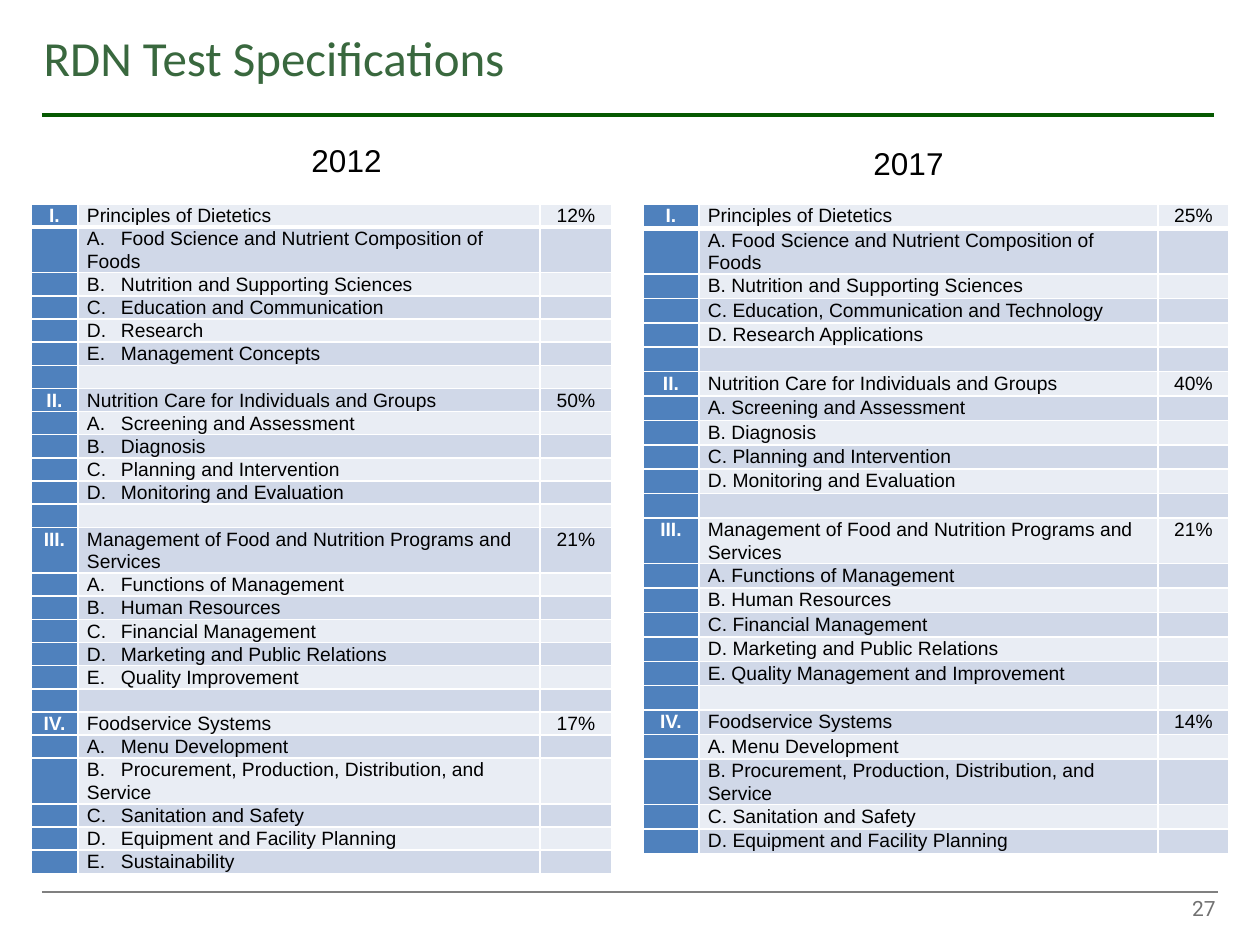
from lxml import etree
from pptx import Presentation
from pptx.dml.color import RGBColor
from pptx.enum.shapes import MSO_CONNECTOR
from pptx.enum.text import MSO_ANCHOR, PP_ALIGN
from pptx.oxml.ns import qn
from pptx.util import Emu, Pt

LEFT, CENTER, RIGHT = PP_ALIGN.LEFT, PP_ALIGN.CENTER, PP_ALIGN.RIGHT
TOP, MIDDLE = MSO_ANCHOR.TOP, MSO_ANCHOR.MIDDLE
STRAIGHT = MSO_CONNECTOR.STRAIGHT

WHITE = RGBColor(0xFF, 0xFF, 0xFF)
BLACK = RGBColor(0x00, 0x00, 0x00)
GRAY = RGBColor(0x80, 0x80, 0x80)
NUMBER_GRAY = RGBColor(0x71, 0x71, 0x71)
RULE_GREEN = RGBColor(0x06, 0x59, 0x01)
TITLE_GREEN = RGBColor(0x39, 0x68, 0x3E)
NUMERAL_BLUE = RGBColor(0x4F, 0x81, 0xBD)
BANDS = (RGBColor(0xE9, 0xED, 0xF4), RGBColor(0xD0, 0xD8, 0xE8))

PX = 914400 / 126
TOPIC_TAB = 34      # where the topic follows its letter
WRAPPED_ROW = 45    # height of a row with two lines
LINE_CHARS = 44     # longer topics take two lines

# Sections: heading, share of the test, topics
SPEC_2012 = [
    ("Principles of Dietetics", "12%",
     ["Food Science and Nutrient Composition of Foods",
      "Nutrition and Supporting Sciences", "Education and Communication",
      "Research", "Management Concepts"]),
    ("Nutrition Care for Individuals and Groups", "50%",
     ["Screening and Assessment", "Diagnosis", "Planning and Intervention",
      "Monitoring and Evaluation"]),
    ("Management of Food and Nutrition Programs and Services", "21%",
     ["Functions of Management", "Human Resources", "Financial Management",
      "Marketing and Public Relations", "Quality Improvement"]),
    ("Foodservice Systems", "17%",
     ["Menu Development",
      "Procurement, Production, Distribution, and Service",
      "Sanitation and Safety", "Equipment and Facility Planning",
      "Sustainability"]),
]
SPEC_2017 = [
    ("Principles of Dietetics", "25%",
     ["Food Science and Nutrient Composition of Foods",
      "Nutrition and Supporting Sciences",
      "Education, Communication and Technology", "Research Applications"]),
    ("Nutrition Care for Individuals and Groups", "40%",
     ["Screening and Assessment", "Diagnosis", "Planning and Intervention",
      "Monitoring and Evaluation"]),
    ("Management of Food and Nutrition Programs and Services", "21%",
     ["Functions of Management", "Human Resources", "Financial Management",
      "Marketing and Public Relations",
      "Quality Management and Improvement"]),
    ("Foodservice Systems", "14%",
     ["Menu Development",
      "Procurement, Production, Distribution, and Service",
      "Sanitation and Safety", "Equipment and Facility Planning"]),
]


def px(length):
    return Emu(round(length * PX))


def spec_rows(sections, gap):
    """Flatten sections into table rows, with an empty row between them."""
    rows = []
    for numeral, (heading, share, topics) in zip(("I.", "II.", "III.", "IV."), sections):
        if rows:
            rows.append(("", "", ""))
        rows.append((numeral, heading, share))
        rows += [("", f"{letter}.{gap}{topic}", "")
                 for letter, topic in zip("ABCDE", topics)]
    return rows


class SlideBuilder:
    font = "Arial"
    cell_size = 11
    cell_line = Pt(13)

    def __init__(self, slide):
        self.slide = slide

    def style(self, paragraph, size, color, font=None, align=LEFT, bold=False):
        paragraph.alignment = align
        paragraph.font.name = font or self.font
        paragraph.font.size = Pt(size)
        paragraph.font.bold = bold
        paragraph.font.color.rgb = color

    def title(self, text, left, top, width, height):
        title = self.slide.shapes.title
        title.left, title.top = px(left), px(top)
        title.width, title.height = px(width), px(height)
        title.text_frame.text = text
        title.text_frame.vertical_anchor = TOP
        self.style(title.text_frame.paragraphs[0], 28, TITLE_GREEN, "Calibri")

    def rule(self, left, right, y, color, weight):
        rule = self.slide.shapes.add_connector(STRAIGHT, px(left), px(y), px(right), px(y))
        rule.line.color.rgb = color
        rule.line.width = Pt(weight)
        etree.SubElement(rule._element.spPr, qn("a:effectLst"))

    def text(self, text, left, top, width, height, size, color,
             font=None, align=LEFT, anchor=TOP):
        box = self.slide.shapes.add_textbox(px(left), px(top), px(width), px(height))
        frame = box.text_frame
        frame.word_wrap = True
        frame.vertical_anchor = anchor
        frame.text = text
        self.style(frame.paragraphs[0], size, color, font, align)

    def borders(self, cell, top, bottom):
        properties = cell._tc.get_or_add_tcPr()
        for side, weight in (("L", 1), ("R", 1), ("T", top), ("B", bottom)):
            line = etree.SubElement(properties, qn(f"a:ln{side}"), w=str(Pt(weight)))
            fill = etree.SubElement(line, qn("a:solidFill"))
            etree.SubElement(fill, qn("a:srgbClr"), val=str(WHITE))

    def cell(self, cell, text, fill, color, align, bold, top, bottom):
        self.borders(cell, top, bottom)
        cell.fill.solid()
        cell.fill.fore_color.rgb = fill
        cell.margin_left = cell.margin_right = px(9)
        cell.margin_top = cell.margin_bottom = 0
        cell.text = text
        paragraph = cell.text_frame.paragraphs[0]
        paragraph.line_spacing = self.cell_line
        if "\t" in text:
            tabs = etree.SubElement(paragraph._p.get_or_add_pPr(), qn("a:tabLst"))
            etree.SubElement(tabs, qn("a:tab"), pos=str(px(TOPIC_TAB)), algn="l")
        self.style(paragraph, self.cell_size, color, align=align, bold=bold)
        if not text:  # keeps empty rows as low as the others
            etree.SubElement(paragraph._p, qn("a:endParaRPr"), sz=str(self.cell_size * 100))

    def table(self, rows, left, top, height, widths):
        table = self.slide.shapes.add_table(
            len(rows), len(widths), px(left), px(top), px(sum(widths)), px(height)).table
        table.first_row = table.horz_banding = False
        for column, width in zip(table.columns, widths):
            column.width = px(width)
        wrapped = [len(row[1]) > LINE_CHARS for row in rows]
        single_row = (height - sum(wrapped) * WRAPPED_ROW) / wrapped.count(False)
        for r, row in enumerate(rows):
            table.rows[r].height = px(WRAPPED_ROW if wrapped[r] else single_row)
            band = BANDS[r % 2]
            looks = ((NUMERAL_BLUE, WHITE, CENTER, True),
                     (band, BLACK, LEFT, False),
                     (band, BLACK, CENTER, False))
            for c, (text, look) in enumerate(zip(row, looks)):
                self.cell(table.cell(r, c), text, *look,
                          top=3 if r == 1 else 1, bottom=3 if r == 0 else 1)


def main():
    deck = Presentation()
    deck.slide_width, deck.slide_height = px(1260), px(945)
    builder = SlideBuilder(deck.slides.add_slide(deck.slide_layouts[5]))

    # Frame: rules, title and page number
    builder.rule(42, 1218, 892, GRAY, 1)
    builder.rule(42, 1214, 115, RULE_GREEN, 2.25)
    builder.title("RDN Test Specifications", 31, 21, 724, 94)
    builder.text("27", 934, 892, 294, 32, 12, NUMBER_GRAY, "Roboto", RIGHT, MIDDLE)

    # Test specifications of both years
    builder.table(spec_rows(SPEC_2012, "\t"), 31, 204, 666, (47, 462, 72))
    builder.table(spec_rows(SPEC_2017, " "), 643, 204, 648, (56, 459, 71))
    builder.text("2012", 168, 135, 357, 50, 18, BLACK, align=CENTER)
    builder.text("2017", 730, 138, 357, 50, 18, BLACK, align=CENTER)

    deck.save("out.pptx")


if __name__ == "__main__":
    main()
